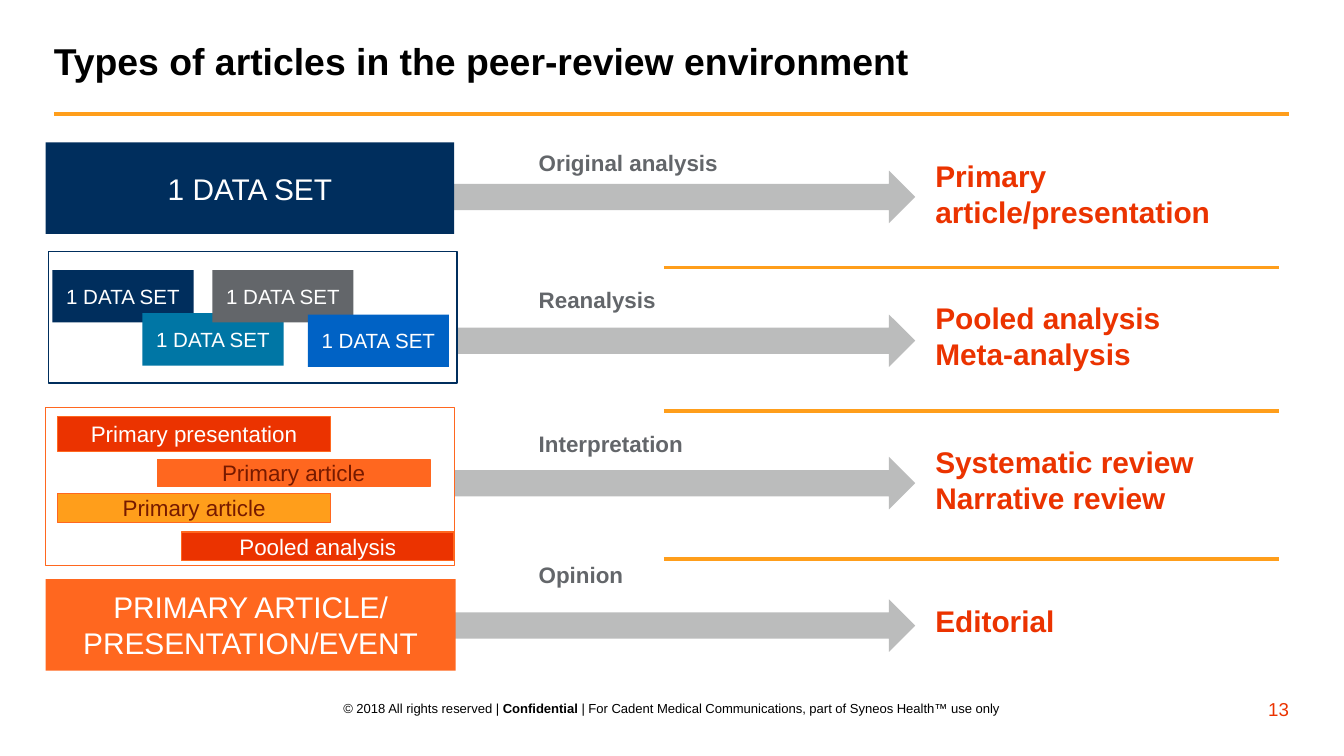
from dataclasses import dataclass

from lxml import etree
from pptx import Presentation
from pptx.dml.color import RGBColor
from pptx.enum.shapes import MSO_CONNECTOR, MSO_SHAPE
from pptx.enum.text import MSO_ANCHOR, MSO_AUTO_SIZE, PP_ALIGN
from pptx.oxml.ns import qn
from pptx.util import Emu, Pt

RECT, ARROW = MSO_SHAPE.RECTANGLE, MSO_SHAPE.RIGHT_ARROW
STRAIGHT = MSO_CONNECTOR.STRAIGHT
MIDDLE, TOP = MSO_ANCHOR.MIDDLE, MSO_ANCHOR.TOP
LEFT, CENTER, RIGHT = PP_ALIGN.LEFT, PP_ALIGN.CENTER, PP_ALIGN.RIGHT
NO_FIT, GROW = MSO_AUTO_SIZE.NONE, MSO_AUTO_SIZE.SHAPE_TO_FIT_TEXT
TITLE_ONLY = 5
EMU_PER_PX = 9144


@dataclass(frozen=True)
class Theme:
    """Colours, font and type sizes of the slide."""
    font: str = "Arial"
    black: str = "000000"
    white: str = "FFFFFF"
    navy: str = "002E5D"
    teal: str = "0076A5"
    blue: str = "0062C5"
    grey: str = "63666A"
    silver: str = "BBBCBC"
    red: str = "EB3300"
    orange: str = "FF671F"
    amber: str = "FF9E1B"
    brown: str = "761A00"
    title: int = 20
    large: int = 16
    label: int = 12
    small: int = 11
    number: int = 10
    footer: int = 7


T = Theme()

# Arrow top, label top, label width, label, result top, result height, result
ROWS = [
    (127, 106, 155, "Original analysis", 119, 50, "Primary article/presentation"),
    (234, 208, 108, "Reanalysis", 214, 71, "Pooled analysis\nMeta-analysis"),
    (340, 315, 129, "Interpretation", 332, 50, "Systematic review\nNarrative review"),
    (446, 413, 84, "Opinion", 437, 50, "Editorial"),
]
DIVIDERS = [199, 306, 416]
DATA_SETS = [(39, 201, T.navy), (106, 233, T.teal), (158, 201, T.grey), (229, 234, T.blue)]
PUBLICATIONS = [
    (43, 310, 26, "Primary presentation", T.red, T.white),
    (43, 367, 22, "Primary article", T.amber, T.brown),
    (117, 342, 20, "Primary article", T.orange, T.brown),
    (135, 396, 21, "Pooled analysis", T.red, T.white),
]


def px(*values):
    """Turn lengths in px into EMU."""
    return [Emu(v * EMU_PER_PX) for v in values]


def rgb(color):
    """Return a colour object for a hex string."""
    return RGBColor.from_string(color)


def style_text(tf, size, color, bold=False, align=LEFT, anchor=MIDDLE, inset=(0, 0)):
    """Format a text frame and all its runs."""
    tf.word_wrap = True
    tf.auto_size = NO_FIT
    tf.vertical_anchor = anchor
    tf.margin_left = tf.margin_right = px(inset[0])[0]
    tf.margin_top = tf.margin_bottom = px(inset[1])[0]
    for p in tf.paragraphs:
        p.alignment = align
        for r in p.runs:
            r.font.name = T.font
            r.font.size = Pt(size)
            r.font.bold = bold
            r.font.color.rgb = rgb(color)


def add_text(s, at, text, size, color, **style):
    """Add a text box and return its text frame."""
    tf = s.shapes.add_textbox(*px(*at)).text_frame
    tf.text = text
    style_text(tf, size, color, **style)
    return tf


def add_box(shapes, at, fill, line=None, text="", size=T.large, color=T.white, kind=RECT):
    """Add a filled shape with optional outline and centred text."""
    sp = shapes.add_shape(kind, *px(*at))
    sp.shadow.inherit = False
    sp.fill.solid()
    sp.fill.fore_color.rgb = rgb(fill)
    if line:
        sp.line.color.rgb = rgb(line)
        sp.line.width = Pt(0.75)
    else:
        sp.line.fill.background()
    if text:
        sp.text_frame.text = text
        style_text(sp.text_frame, size, color, align=CENTER)


def add_rule(s, left, right, y):
    """Add a horizontal amber rule."""
    line = s.shapes.add_connector(STRAIGHT, *px(left, y, right, y))
    line.line.color.rgb = rgb(T.amber)
    line.line.width = Pt(2)
    etree.SubElement(line._element.spPr, qn("a:effectLst"))


def add_title(s, text):
    """Place and format the title placeholder."""
    title = s.shapes.title
    title.left, title.top, title.width, title.height = px(40, 10, 919, 75)
    title.text_frame.text = text
    style_text(title.text_frame, T.title, T.black, bold=True)
    title.text_frame.paragraphs[0].line_spacing = 0.85


def add_footer(s):
    """Add the copyright line and the page number."""
    tf = add_text(s, (254, 516, 491, 22), "", T.footer, T.black)
    for text in ("© 2018 All rights reserved | ", "Confidential",
                 " | For Cadent Medical Communications, part of Syneos Health™ use only"):
        tf.paragraphs[0].add_run().text = text
    style_text(tf, T.footer, T.black, align=CENTER)
    tf.paragraphs[0].runs[1].font.bold = True
    add_text(s, (918, 519, 41, 17), "13", T.number, T.red, align=RIGHT)


def add_row(s, arrow_top, label_top, label_width, label, top, height, result):
    """Add an arrow with its label and resulting article types."""
    add_box(s.shapes, (334, arrow_top, 347, 39), T.silver, kind=ARROW)
    tf = add_text(s, (391, label_top, label_width, 30), label, T.label, T.grey,
                  bold=True, anchor=TOP, inset=(10, 5))
    tf.word_wrap = False
    tf.auto_size = GROW
    add_text(s, (696, top, 243, height), result, T.large, T.red, bold=True)


def add_sources(s):
    """Add the source boxes on the left."""
    add_box(s.shapes, (34, 106, 304, 68), T.navy, text="1 DATA SET")
    add_box(s.shapes, (36, 187, 304, 98), T.white, T.navy)
    group = s.shapes.add_group_shape()
    for left, top, fill in DATA_SETS:
        add_box(group.shapes, (left, top, 105, 39), fill, text="1 DATA SET", size=T.small)
    add_box(s.shapes, (34, 303, 304, 118), T.white, T.orange)
    for left, top, height, text, fill, color in PUBLICATIONS:
        add_box(s.shapes, (left, top, 203, height), fill, T.orange, text, T.label, color)
    add_box(s.shapes, (34, 431, 305, 68), T.orange, text="PRIMARY ARTICLE/\vPRESENTATION/EVENT")


def main():
    """Build and save the slide."""
    prs = Presentation()
    prs.slide_width = px(1000)[0]
    prs.slide_height = prs.slide_width * 9 // 16
    s = prs.slides.add_slide(prs.slide_layouts[TITLE_ONLY])
    add_title(s, "Types of articles in the peer-review environment")
    add_rule(s, 40, 959, 85)
    for row in ROWS:
        add_row(s, *row)
    for y in DIVIDERS:
        add_rule(s, 494, 952, y)
    add_sources(s)
    add_footer(s)
    prs.save("out.pptx")


if __name__ == "__main__":
    main()
